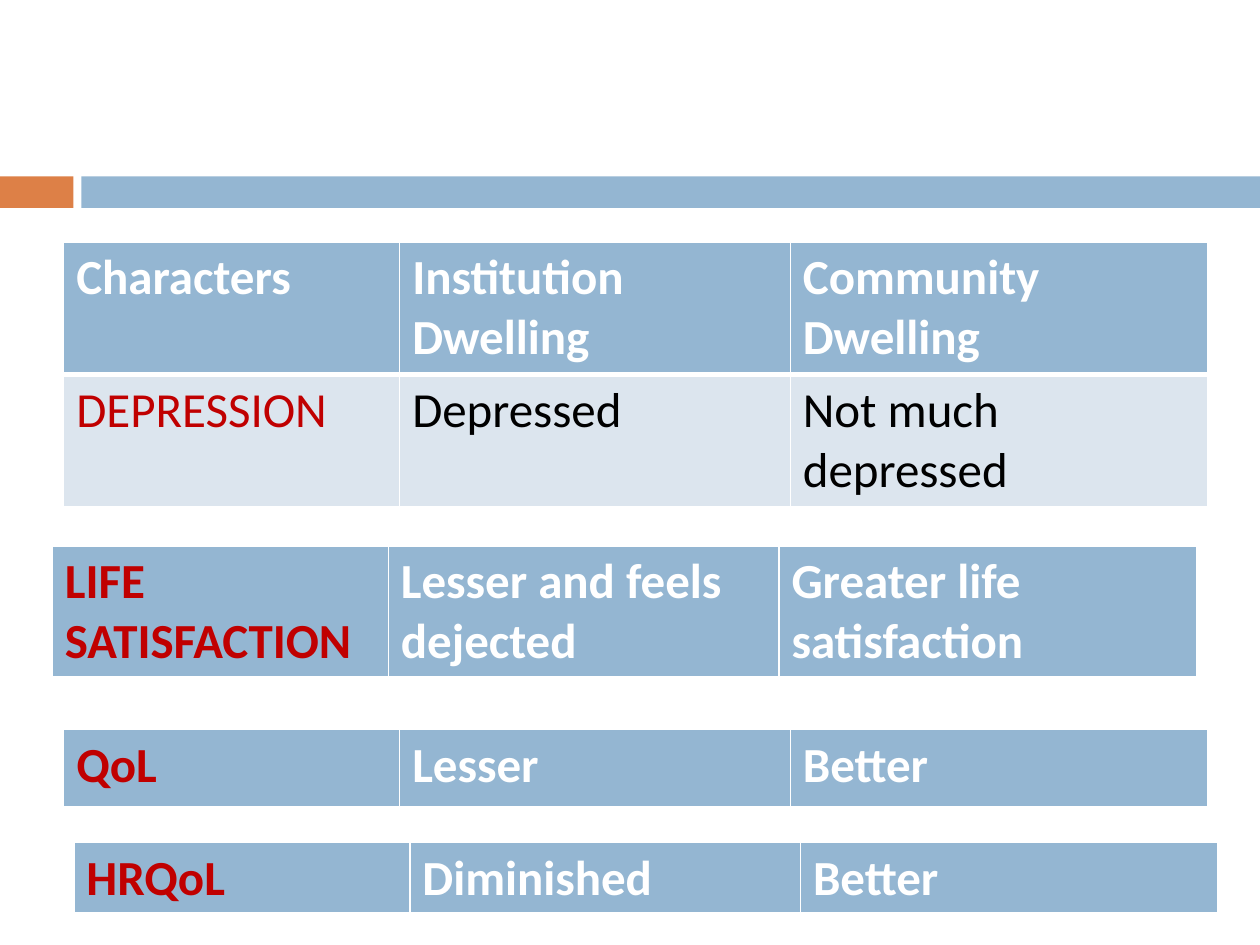
"""Builds a slide comparing institution and community dwelling in four tables."""
from dataclasses import dataclass

from lxml import etree
from pptx import Presentation
from pptx.dml.color import RGBColor
from pptx.enum.shapes import MSO_SHAPE
from pptx.oxml.ns import qn
from pptx.util import Pt

RECT = MSO_SHAPE.RECTANGLE


@dataclass(frozen=True)
class Theme:
    font: str = "Calibri"
    size: float = 28
    blue: str = "94B6D2"
    pale: str = "DCE5EE"
    orange: str = "DD8047"
    red: str = "C00000"
    white: str = "FFFFFF"
    black: str = "000000"


T = Theme()


def set_border(cell, side, width):
    ln = etree.SubElement(cell._tc.get_or_add_tcPr(), qn(f"a:ln{side}"), w=str(Pt(width)))
    fill = etree.SubElement(ln, qn("a:solidFill"))
    etree.SubElement(fill, qn("a:srgbClr"), val=T.white)


def set_cell(cell, text, color, fill, bold, borders):
    for side, width in borders.items():
        set_border(cell, side, width)
    cell.fill.solid()
    cell.fill.fore_color.rgb = RGBColor.from_string(fill)
    r = cell.text_frame.paragraphs[0].add_run()
    r.text = text
    r.font.name = T.font
    r.font.size = Pt(T.size)
    r.font.bold = bold
    r.font.color.rgb = RGBColor.from_string(color)


prs = Presentation()
prs.slide_width, prs.slide_height = Pt(720), Pt(540)
s = prs.slides.add_slide(prs.slide_layouts[6])

for left, width, color in [(0, 42, T.orange), (46.5, 673.5, T.blue)]:
    sp = s.shapes.add_shape(RECT, Pt(left), Pt(100.8), Pt(width), Pt(18))
    sp.shadow.inherit = False
    sp.fill.solid()
    sp.fill.fore_color.rgb = RGBColor.from_string(color)
    sp.line.fill.background()

COLUMNS = [192, 223.2, 238.6]
HEAD_BORDERS = {"L": 1, "R": 1, "T": 1, "B": 3}
BODY_BORDERS = {"L": 1, "R": 1, "B": 1}
tables = [
    (36.4, 138.2, 74.5, T.white, [
        ["Characters", "Institution Dwelling", "Community Dwelling"],
        ["DEPRESSION", "Depressed", "Not much depressed"],
    ]),
    (42.2, 481.2, 40.8, T.red, [["HRQoL", "Diminished", "Better"]]),
    (36.4, 416.9, 45, T.red, [["QoL", "Lesser", "Better"]]),
    (29.9, 312, 74.5, T.red, [
        ["LIFE SATISFACTION", "Lesser and feels dejected", "Greater life satisfaction"],
    ]),
]

for left, top, row_height, label_color, rows in tables:
    table = s.shapes.add_table(
        len(rows), len(COLUMNS), Pt(left), Pt(top), Pt(sum(COLUMNS)), Pt(row_height * len(rows))
    ).table
    for column, width in zip(table.columns, COLUMNS):
        column.width = Pt(width)
    for i, texts in enumerate(rows):
        head = i == 0
        table.rows[i].height = Pt(row_height)
        for j, text in enumerate(texts):
            color = T.white if head else T.black
            if j == 0:
                color = label_color if head else T.red
            set_cell(table.cell(i, j), text, color, T.blue if head else T.pale,
                     head, HEAD_BORDERS if head else BODY_BORDERS)

prs.save("out.pptx")
